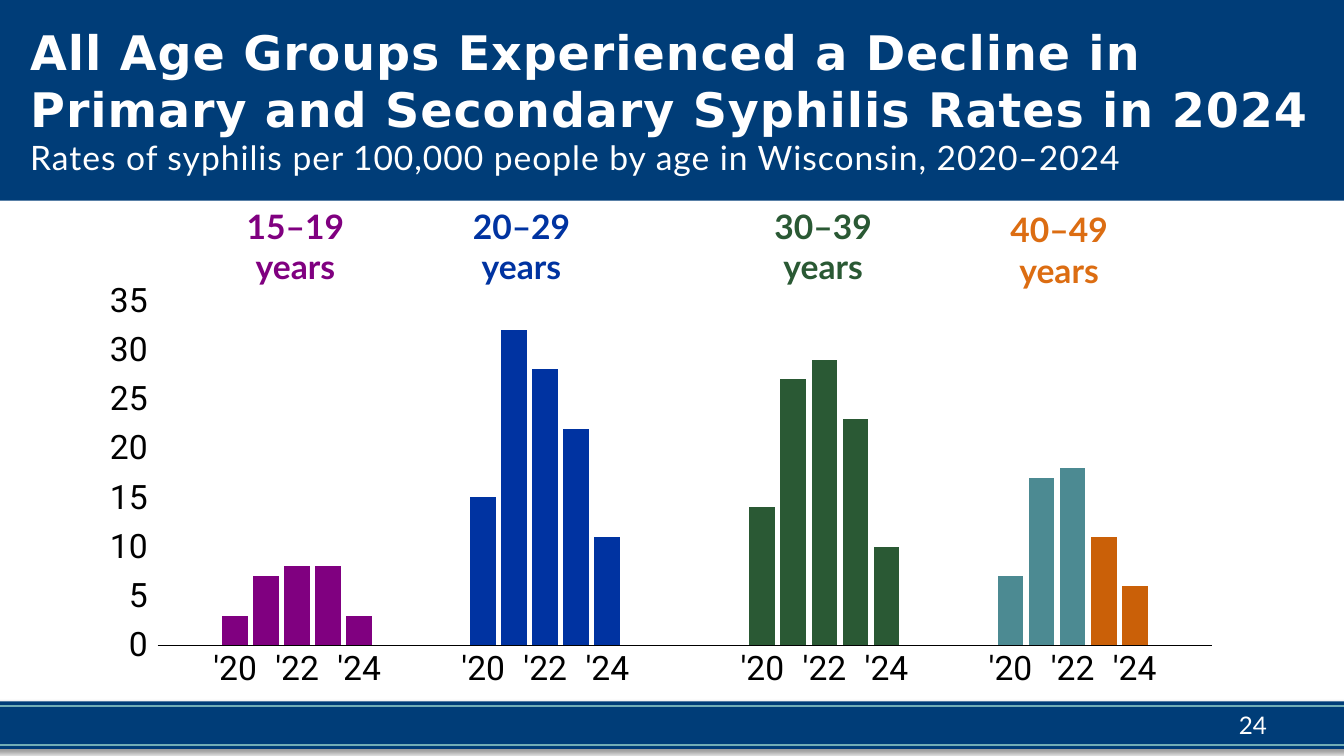
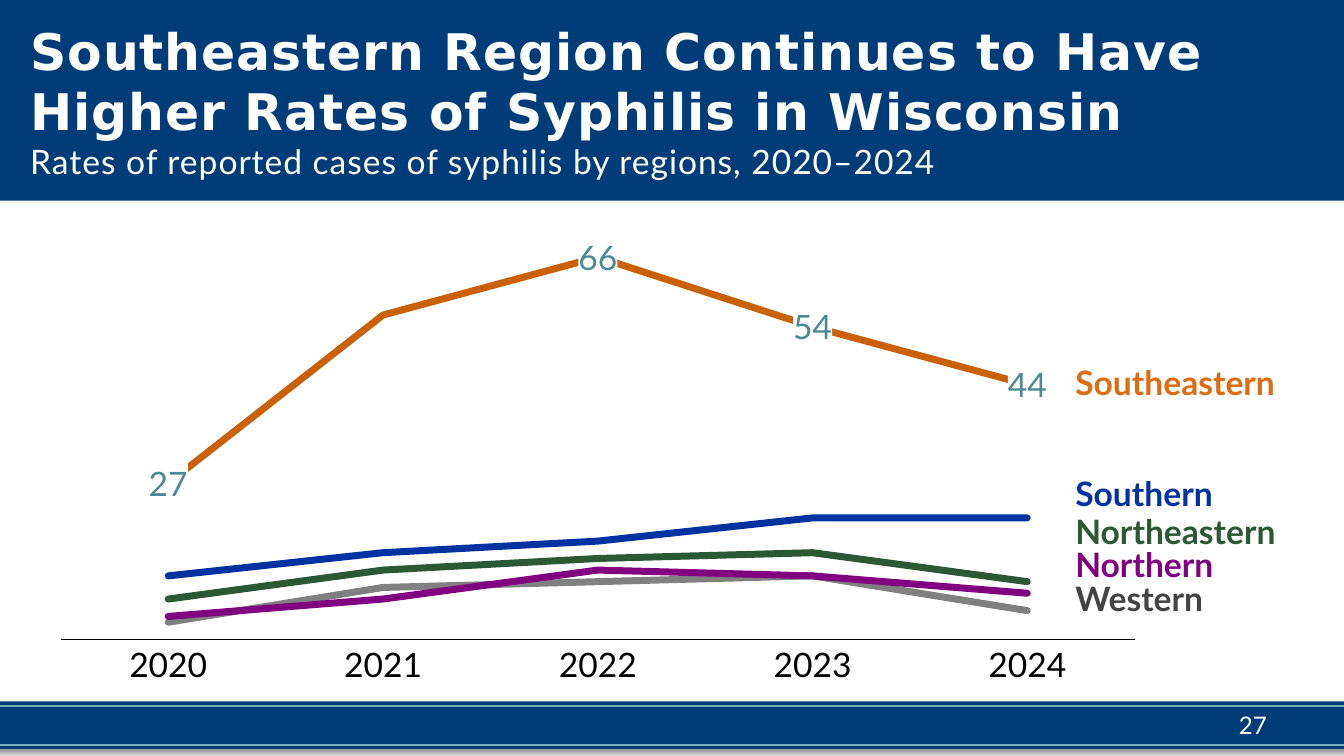
"""Build two slides on syphilis rates in Wisconsin, by age and by region."""
from lxml.etree import SubElement
from pptx import Presentation
from pptx.chart.data import CategoryChartData as Data
from pptx.dml.color import RGBColor as RGB
from pptx.enum.chart import XL_CHART_TYPE as Kind
from pptx.enum.chart import XL_LABEL_POSITION as Spot
from pptx.enum.chart import XL_TICK_MARK as Tick
from pptx.enum.shapes import MSO_CONNECTOR as Line
from pptx.enum.shapes import MSO_SHAPE as Shape
from pptx.enum.text import MSO_ANCHOR as Anchor
from pptx.enum.text import PP_ALIGN as Align
from pptx.oxml import parse_xml
from pptx.oxml.ns import nsdecls, qn
from pptx.util import Pt

HUES = {
    "navy": "003D78", "aqua": "72AEB6", "white": "FFFFFF", "black": "000000",
    "purple": "800080", "blue": "0033A1", "green": "2A5934", "teal": "4C8A92",
    "rust": "CA6008", "orange": "DC6D12", "gray": "808080", "dark": "434343",
}
INK = {name: RGB.from_string(code) for name, code in HUES.items()}
WIDE, HIGH = 960, 540


def write(slide, box, lines, hue, size=24, bold=True, align=Align.LEFT, anchor=Anchor.TOP):
    frame = slide.shapes.add_textbox(*map(Pt, box)).text_frame
    frame.word_wrap = True
    frame.vertical_anchor = anchor
    frame.text = "\n".join(lines)
    for para in frame.paragraphs:
        para.alignment = align
        font = para.font
        font.name, font.size, font.bold = "Lato", Pt(size), bold
        font.color.rgb = INK[hue]


def plot(slide, kind, box, data, inner, face, top):
    chart = slide.shapes.add_chart(kind, *map(Pt, box), data).chart
    chart.has_legend = chart.has_title = False
    chart.font.name, chart.font.size = face, Pt(24)
    chart.font.color.rgb = INK["black"]
    space = chart._chartSpace
    space.find(qn("c:txPr")).addprevious(parse_xml(
        f'<c:spPr {nsdecls("c", "a")}><a:noFill/><a:ln><a:noFill/></a:ln></c:spPr>'))
    area = space.find(".//" + qn("c:plotArea"))
    for old in area.findall(qn("c:layout")):
        area.remove(old)
    marks = [("layoutTarget", "inner"), ("xMode", "edge"), ("yMode", "edge")]
    marks += zip("xywh", inner)
    tags = "".join(f'<c:{tag} val="{val}"/>' for tag, val in marks)
    area.insert(0, parse_xml(
        f'<c:layout {nsdecls("c")}><c:manualLayout>{tags}</c:manualLayout></c:layout>'))
    cat, val = chart.category_axis, chart.value_axis
    cat.major_tick_mark = Tick.NONE
    cat.format.line.color.rgb = INK["black"]
    cat.format.line.width = Pt(0.75)
    cat.tick_labels.font.size = Pt(24)
    cat._element.find(qn("c:txPr")).find(qn("a:bodyPr")).set("rot", "-60000000")
    val.has_major_gridlines = False
    val.minimum_scale, val.maximum_scale = 0, top
    return chart


deck = Presentation()
deck.slide_width, deck.slide_height = Pt(WIDE), Pt(HIGH)

pages = [
    ("24", 34, "All Age Groups Experienced a Decline in Primary and Secondary Syphilis Rates in 2024",
     "Rates of syphilis per 100,000 people by age in Wisconsin, 2020–2024"),
    ("27", 36, "Southeastern Region Continues to Have Higher Rates of Syphilis in Wisconsin",
     "Rates of reported cases of syphilis by regions, 2020–2024"),
]
slides = []
for number, size, title, note in pages:
    slide = deck.slides.add_slide(deck.slide_layouts[6])
    slides.append(slide)
    left, right = -9.5, WIDE + 9.5
    foot, head = [
        slide.shapes.add_shape(Shape.RECTANGLE, *map(Pt, box))
        for box in ((left, 501, right - left, 34), (0, 0, WIDE, 143.3))
    ]
    for band in (foot, head):
        band.shadow.inherit = False
        band.fill.solid()
        band.fill.fore_color.rgb = INK["navy"]
        band.line.fill.background()
    glow = SubElement(foot._element.spPr.find(qn("a:effectLst")), qn("a:outerShdw"),
                      blurRad=str(Pt(4)), dist=str(Pt(3)), dir="2700000", rotWithShape="0")
    shade = SubElement(glow, qn("a:srgbClr"), val=HUES["black"])
    SubElement(shade, qn("a:alpha"), val="40000")
    for y in (504, 532):
        rule = slide.shapes.add_connector(Line.STRAIGHT, Pt(left), Pt(y), Pt(right), Pt(y))
        rule.line.color.rgb = INK["aqua"]
        rule.line.width = Pt(1.5)
        SubElement(rule._element.spPr, qn("a:effectLst"))

    frame = head.text_frame
    frame.word_wrap = True
    frame.vertical_anchor = Anchor.MIDDLE
    frame.margin_left = Pt(21.6)
    para = frame.paragraphs[0]
    para.alignment = Align.LEFT
    para.font.color.rgb = INK["white"]
    for text, face, points, bold in ((title, "DejaVu Sans", size, True), (note, "Lato", 24, False)):
        if para.runs:
            para.add_line_break()
        run = para.add_run()
        run.text = text
        run.font.name, run.font.size, run.font.bold = face, Pt(points), bold
        run.font._element.set("spc", "70")
    write(slide, (688, 503, 224, 29), [number], "white", 17.3, False, Align.RIGHT, Anchor.MIDDLE)

ages, regions = slides

groups = [
    ("15–19", "purple", 211, 143.3, 2, [3, 7, 8, 8, 3], ["purple"] * 5),
    ("20–29", "blue", 372.5, 143.3, 10, [15, 32, 28, 22, 11], ["blue"] * 5),
    ("30–39", "green", 588, 143.3, 19, [14, 27, 29, 23, 10], ["green"] * 5),
    ("40–49", "orange", 756.5, 146, 27, [7, 17, 18, 11, 6], ["teal"] * 3 + ["rust"] * 2),
]
years, rates, fills = [""] * 34, [None] * 34, {}
for _, _, _, _, start, vals, hues in groups:
    for step, (rate, hue) in enumerate(zip(vals, hues)):
        rates[start + step], fills[start + step] = rate, hue
        if step % 2 == 0:
            years[start + step] = f"'{20 + step}"
data = Data()
data.categories = years
data.add_series("Rate", rates)
chart = plot(ages, Kind.COLUMN_CLUSTERED, (64, 199.5, 810, 304), data,
             (0.06, 0.05, 0.93, 0.81), "Roboto", 35)
axis = chart.value_axis
axis.major_unit = 5
axis.major_tick_mark = Tick.OUTSIDE
axis.format.line.fill.background()
bars = chart.plots[0]
bars.gap_width, bars.overlap, bars.vary_by_categories = 20, -2, False
row = bars.series[0]
row.format.fill.solid()
row.format.fill.fore_color.rgb = INK["navy"]
for spot, hue in fills.items():
    fill = row.points[spot].format.fill
    fill.solid()
    fill.fore_color.rgb = INK[hue]
for name, hue, mid, top, *_ in groups:
    write(ages, (mid - 50, top, 100, 65.5), [name, "years"], hue, align=Align.CENTER)

areas = [
    ("Northeastern", "green", "green", 361.5, [7, 12, 14, 15, 10]),
    ("Western", "gray", "dark", 409, [3, 9, 10, 11, 5]),
    ("Southeastern", "rust", "orange", 255, [27, 56, 66, 54, 44]),
    ("Southern", "blue", "blue", 334, [11, 15, 17, 21, 21]),
    ("Northern", "purple", "purple", 385, [4, 7, 12, 11, 8]),
]
data = Data()
data.categories = [str(year) for year in range(2020, 2025)]
for name, _, _, _, vals in areas:
    data.add_series(name, vals)
chart = plot(regions, Kind.LINE, (27.5, 157, 799, 337), data,
             (0.02, 0.03, 0.96, 0.86), "Lato", 70)
chart.value_axis.visible = False
chart.plots[0].vary_by_categories = False
for row, (name, hue, ink, top, _) in zip(chart.plots[0].series, areas):
    row.smooth = False
    line = row.format.line
    line.color.rgb = INK[hue]
    line.width = Pt(5)
    row._element.spPr.find(qn("a:ln")).set("cap", "rnd")
    write(regions, (761, top, 190, 36.5), [name], ink)

tags = chart.plots[0].series[2].data_labels
tags.show_value = True
tags.position = Spot.CENTER
tags.font.name, tags.font.size = "Lato", Pt(24)
tags.font.color.rgb = INK["teal"]
root = tags._element
root.find(qn("c:txPr")).addprevious(parse_xml(
    f'<c:spPr {nsdecls("c", "a")}><a:solidFill><a:srgbClr val="{HUES["white"]}"/></a:solidFill></c:spPr>'))
root.insert(0, parse_xml(
    f'<c:dLbl {nsdecls("c")}><c:idx val="1"/><c:delete val="1"/></c:dLbl>'))

deck.save("out.pptx")
